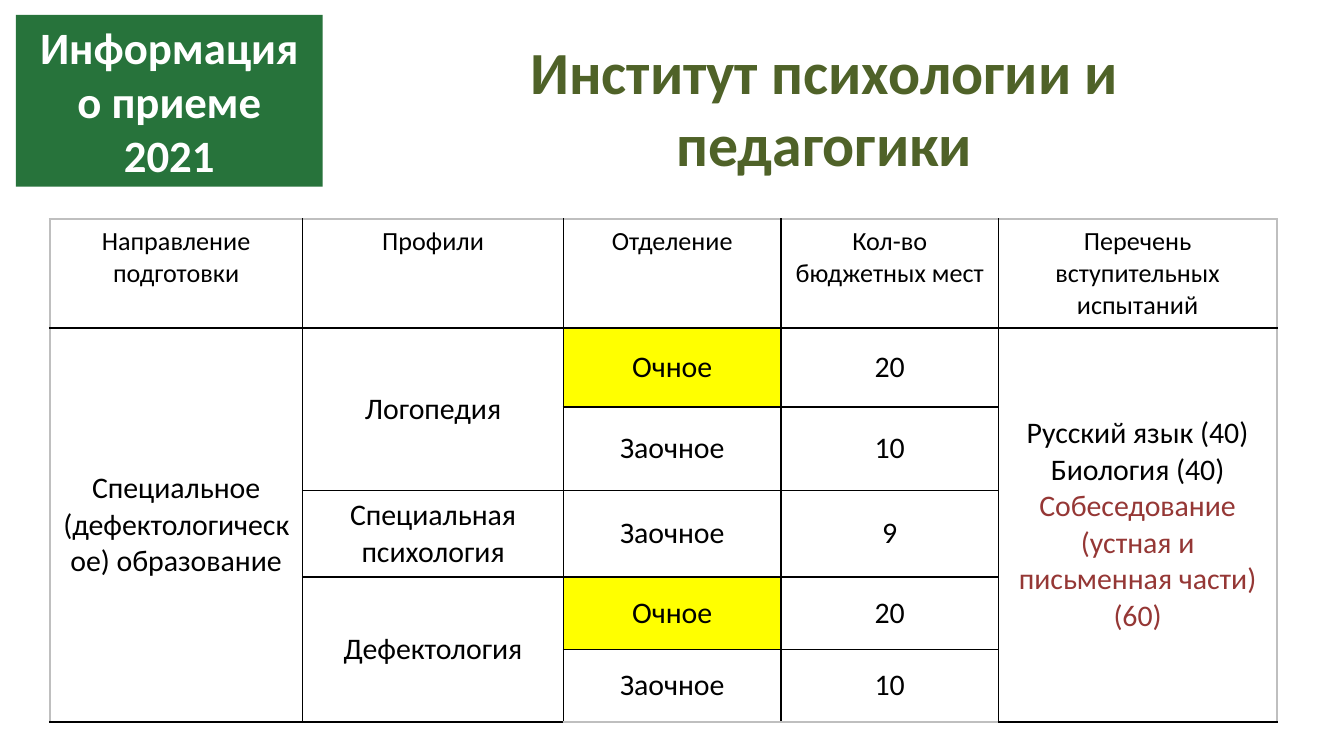
from dataclasses import dataclass

from lxml.etree import SubElement
from pptx import Presentation
from pptx.dml.color import RGBColor
from pptx.enum.shapes import MSO_SHAPE
from pptx.enum.text import MSO_ANCHOR, PP_ALIGN
from pptx.oxml.ns import qn
from pptx.util import Cm, Pt

FONT = "Calibri"
WHITE = RGBColor(0xFF, 0xFF, 0xFF)
BLACK = RGBColor(0x00, 0x00, 0x00)
GREEN = RGBColor(0x27, 0x73, 0x3B)
OLIVE = RGBColor(0x4F, 0x62, 0x28)
YELLOW = RGBColor(0xFF, 0xFF, 0x00)
MAROON = RGBColor(0x95, 0x37, 0x35)
GREY = RGBColor(0xBF, 0xBF, 0xBF)

COL_WIDTHS = [4.78, 4.93, 4.11, 4.11, 5.26]
ROW_HEIGHTS = [1.37, 1.5, 1.57, 1.37, 1.37, 1.37]
HEADERS = ["Направление подготовки", "Профили", "Отделение",
           "Кол-во бюджетных мест", "Перечень вступительных испытаний"]


@dataclass(frozen=True)
class Line:
    text: str
    color: RGBColor = BLACK


@dataclass(frozen=True)
class Entry:
    row: int
    col: int
    lines: tuple[Line, ...]
    rows: int = 1


@dataclass(frozen=True)
class Intake:
    form: str
    places: int


FULL_TIME, PART_TIME = "Очное", "Заочное"
INTAKES = [Intake(FULL_TIME, 20), Intake(PART_TIME, 10), Intake(PART_TIME, 9),
           Intake(FULL_TIME, 20), Intake(PART_TIME, 10)]
ENTRIES = [
    Entry(1, 0, (Line("Специальное (дефектологическое) образование"),), 5),
    Entry(1, 1, (Line("Логопедия"),), 2),
    Entry(3, 1, (Line("Специальная психология"),)),
    Entry(4, 1, (Line("Дефектология"),), 2),
    Entry(1, 4, (Line("Русский язык (40)"), Line("Биология (40)"),
                 Line("Собеседование (устная и письменная части) (60)", MAROON)), 5),
]


def write(tf, lines: tuple[Line, ...], size: int, bold: bool = False) -> None:
    tf.word_wrap = True
    for i, line in enumerate(lines):
        p = tf.add_paragraph() if i else tf.paragraphs[0]
        p.alignment = PP_ALIGN.CENTER
        r = p.add_run()
        r.text = line.text
        r.font.name = FONT
        r.font.size = Pt(size)
        r.font.bold = bold
        r.font.color.rgb = line.color


def fill_cell(cell, lines: tuple[Line, ...], size: int = 16) -> None:
    write(cell.text_frame, lines, size)
    cell.vertical_anchor = MSO_ANCHOR.MIDDLE


def set_borders(cell, colors: dict[str, RGBColor]) -> None:
    tc_pr = cell._tc.get_or_add_tcPr()
    for side, color in colors.items():
        ln = SubElement(tc_pr, qn(f"a:ln{side}"), w=str(Pt(1)))
        fill = SubElement(ln, qn("a:solidFill"))
        SubElement(fill, qn("a:srgbClr"), val=str(color))


def add_admission_table(s) -> None:
    n_rows, n_cols = len(ROW_HEIGHTS), len(COL_WIDTHS)
    frame = s.shapes.add_table(n_rows, n_cols, Cm(0.94), Cm(4.14), Cm(23.19), Cm(9.45))
    table = frame.table
    table.first_row = table.horz_banding = False
    for column, width in zip(table.columns, COL_WIDTHS):
        column.width = Cm(width)
    for row, height in zip(table.rows, ROW_HEIGHTS):
        row.height = Cm(height)
    frame.height = Cm(9.45)

    for r in range(n_rows):
        for c in range(n_cols):
            cell = table.cell(r, c)
            set_borders(cell, {
                "L": GREY if c == 0 else BLACK,
                "R": GREY if c == n_cols - 1 else BLACK,
                "T": GREY if r == 0 else BLACK,
                "B": GREY if r == n_rows - 1 else BLACK,
            })
            cell.fill.solid()
            cell.fill.fore_color.rgb = WHITE

    for c, header in enumerate(HEADERS):
        write(table.cell(0, c).text_frame, (Line(header),), 14)
    for r, intake in enumerate(INTAKES, start=1):
        form = table.cell(r, 2)
        fill_cell(form, (Line(intake.form),))
        if intake.form == FULL_TIME:
            form.fill.fore_color.rgb = YELLOW
        fill_cell(table.cell(r, 3), (Line(str(intake.places)),))
    for entry in ENTRIES:
        cell = table.cell(entry.row, entry.col)
        if entry.rows > 1:
            cell.merge(table.cell(entry.row + entry.rows - 1, entry.col))
        fill_cell(cell, entry.lines)


def add_banner(s) -> None:
    sp = s.shapes.add_shape(MSO_SHAPE.RECTANGLE, Cm(0.3), Cm(0.28), Cm(5.8), Cm(3.25))
    sp.shadow.inherit = False
    sp.fill.solid()
    sp.fill.fore_color.rgb = GREEN
    sp.line.fill.background()
    tf = sp.text_frame
    tf.margin_left = tf.margin_right = Cm(0.35)
    tf.vertical_anchor = MSO_ANCHOR.MIDDLE
    write(tf, (Line("Информация о приеме 2021", WHITE),), 24, bold=True)


def set_title(s) -> None:
    title = s.shapes.title
    title.left, title.top, title.width, title.height = Cm(7.04), Cm(0.53), Cm(17.09), Cm(3)
    title.text_frame.vertical_anchor = MSO_ANCHOR.TOP
    write(title.text_frame, (Line("Институт психологии и педагогики", OLIVE),), 32, bold=True)


def main() -> None:
    prs = Presentation()
    prs.slide_width, prs.slide_height = Cm(25.4), Cm(14.29)
    s = prs.slides.add_slide(prs.slide_layouts[5])
    add_banner(s)
    set_title(s)
    add_admission_table(s)
    prs.save("out.pptx")


if __name__ == "__main__":
    main()
